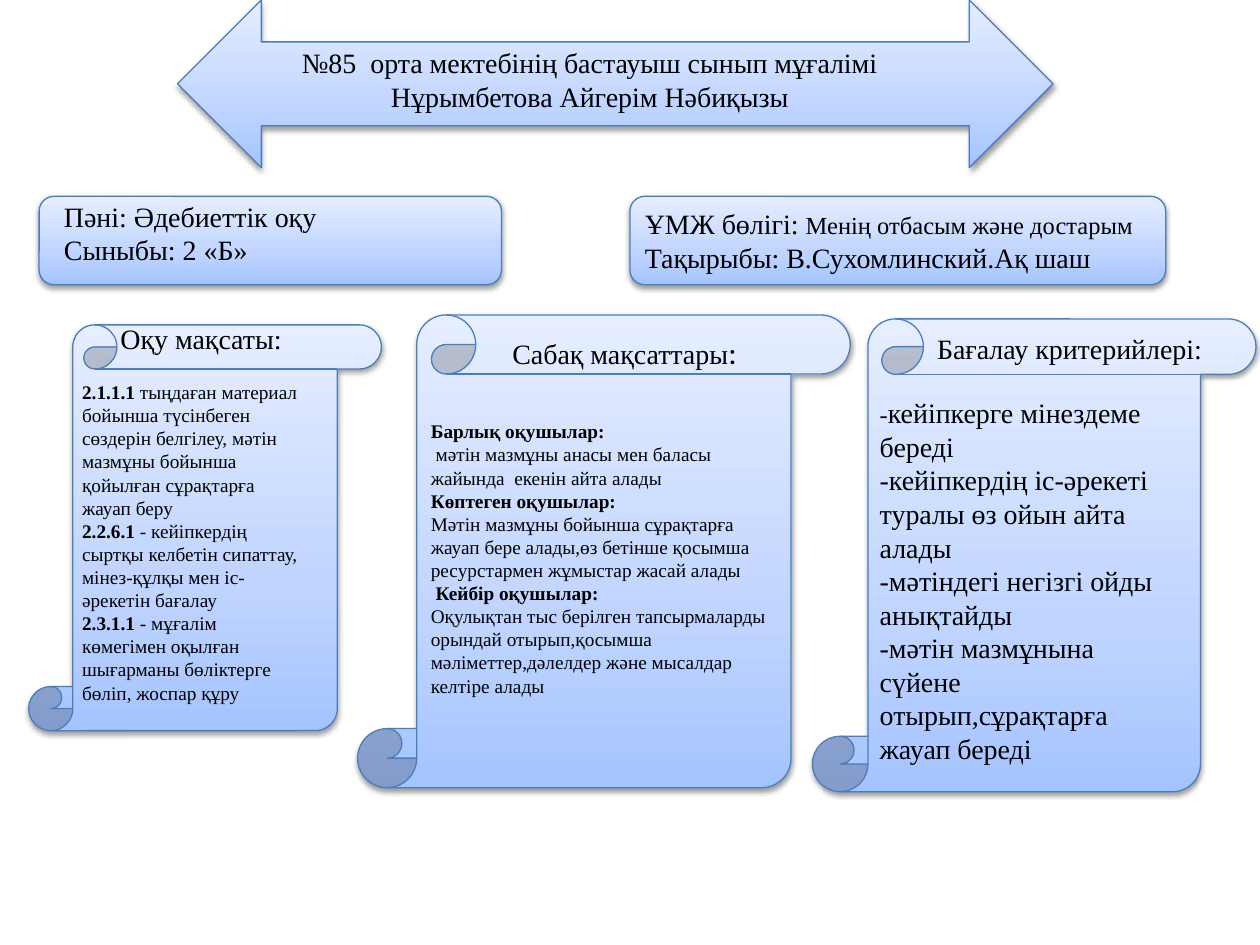
from copy import deepcopy
from dataclasses import dataclass

from pptx import Presentation, oxml, util as u
from pptx.dml.color import RGBColor
from pptx.enum import shapes, text
from pptx.oxml import ns

COLORS = {
    "text": "000000",
    "outline": "4B7EBC",
    "deep": "A4C4FF",
    "middle": "BFD4FF",
    "pale": "E6EEFF",
    "shadow": "000000",
}
SERIF = "Times New Roman"
SHADOW = (
    f'<a:outerShdw {ns.nsdecls("a")} blurRad="40000" dist="20000" dir="5400000" rotWithShape="0">'
    f'<a:srgbClr val="{COLORS["shadow"]}"><a:alpha val="38000"/></a:srgbClr></a:outerShdw>'
)


@dataclass(frozen=True)
class Area:
    left: float
    top: float
    width: float
    height: float

    def lengths(self) -> tuple:
        return tuple(u.Cm(n) for n in (self.left, self.top, self.width, self.height))


@dataclass(frozen=True)
class Span:
    text: str
    size: int = 16
    bold: bool = False
    font: str = SERIF


@dataclass(frozen=True)
class Backdrop:
    kind: shapes.MSO_SHAPE
    area: Area


@dataclass(frozen=True)
class Passage:
    area: Area
    lines: list[list[Span]]
    placeholder: int | None = None
    align: text.PP_ALIGN = text.PP_ALIGN.LEFT


def small(content: str, bold: bool = False) -> Span:
    return Span(content, 11, bold)


BACKDROPS = [
    Backdrop(shapes.MSO_SHAPE.LEFT_RIGHT_ARROW, Area(3.58, 0, 17.65, 3.38)),
    Backdrop(shapes.MSO_SHAPE.ROUNDED_RECTANGLE, Area(0.79, 3.96, 9.32, 1.78)),
    Backdrop(shapes.MSO_SHAPE.ROUNDED_RECTANGLE, Area(12.7, 3.96, 10.8, 1.78)),
    Backdrop(shapes.MSO_SHAPE.VERTICAL_SCROLL, Area(0.58, 6.55, 7.11, 8.18)),
    Backdrop(shapes.MSO_SHAPE.VERTICAL_SCROLL, Area(7.21, 6.35, 9.93, 9.53)),
    Backdrop(shapes.MSO_SHAPE.VERTICAL_SCROLL, Area(16.38, 6.43, 8.94, 9.53)),
]

TEACHER = Passage(Area(5.16, 0.79, 13.46, 1.7), [
    [Span("№85  орта мектебінің бастауыш сынып мұғалімі")],
    [Span("Нұрымбетова Айгерім Нәбиқызы")],
], 0, text.PP_ALIGN.CENTER)

SUBJECT = Passage(Area(1.04, 3.89, 8.74, 1.63), [
    [Span("Пәні: Әдебиеттік оқу")],
    [Span("Сыныбы: 2 «Б»")],
])

TOPIC = Passage(Area(12.75, 4.04, 10.54, 1.63), [
    [Span("ҰМЖ бөлігі: "), Span("Менің отбасым және достарым", 14)],
    [Span("Тақырыбы: В.Сухомлинский.Ақ шаш")],
])

HEADINGS = [
    Passage(Area(2.18, 6.35, 4.37, 0.94), [[Span("Оқу мақсаты:")]]),
    Passage(Area(10.08, 6.58, 6.15, 1.02), [
        [Span("Сабақ мақсаттары"), Span(":", 18, font="Calibri")],
    ]),
    Passage(Area(18.64, 6.55, 6.5, 0.94), [[Span("Бағалау критерийлері:")]]),
]

GOALS = Passage(Area(1.4, 7.54, 4.9, 6.83), [
    [small("2.1.1.1 ", True), small("тыңдаған материал бойынша түсінбеген сөздерін белгілеу, мәтін")],
    [small("мазмұны бойынша қойылған сұрақтарға жауап беру")],
    [small("2.2.6.1 ", True), small("- кейіпкердің сыртқы келбетін сипаттау, мінез-құлқы мен іс-әрекетін бағалау")],
    [small("2.3.1.1", True), small(" - мұғалім көмегімен оқылған шығарманы бөліктерге бөліп, жоспар құру")],
], 1)

OBJECTIVES = Passage(Area(8.43, 8.33, 7.49, 5.8), [
    [small("Барлық оқушылар:", True)],
    [small(" мәтін мазмұны анасы мен баласы жайында  екенін айта алады")],
    [small("Көптеген оқушылар:", True)],
    [small("Мәтін мазмұны бойынша сұрақтарға жауап бере алады,өз бетінше қосымша ресурстармен жұмыстар жасай алады")],
    [small(" Кейбір оқушылар:", True)],
    [small("Оқулықтан тыс берілген тапсырмаларды орындай отырып,қосымша мәліметтер,дәлелдер және мысалдар келтіре алады")],
], 2)

CRITERIA = Passage(Area(17.48, 7.85, 6.15, 7.7), [
    [Span("-", 14), Span("кейіпкерге мінездеме береді")],
    [Span("-кейіпкердің іс-әрекеті туралы өз ойын айта алады")],
    [Span("-мәтіндегі негізгі ойды анықтайды")],
    [Span("-мәтін мазмұнына сүйене отырып,сұрақтарға жауап береді")],
], 4)


def draw_backdrop(page, backdrop: Backdrop) -> None:
    shape = page.shapes.add_shape(backdrop.kind, *backdrop.area.lengths())
    shape.fill.gradient()
    shape.fill.gradient_angle = 90
    stops = shape.element.spPr.find(".//" + ns.qn("a:gsLst"))
    stops.insert(1, deepcopy(stops[0]))
    levels = (("deep", 0), ("middle", 0.35), ("pale", 1))
    for stop, (name, position) in zip(shape.fill.gradient_stops, levels):
        stop.color.rgb = RGBColor.from_string(COLORS[name])
        stop.position = position
    shape.line.color.rgb = RGBColor.from_string(COLORS["outline"])
    shape.line.width = u.Pt(0.75)
    shape.shadow.inherit = False
    shape.element.spPr.find(ns.qn("a:effectLst")).append(oxml.parse_xml(SHADOW))


def style_font(font, span: Span) -> None:
    font.name = span.font
    font.size = u.Pt(span.size)
    font.bold = span.bold
    font.color.rgb = RGBColor.from_string(COLORS["text"])


def write_line(para, spans: list[Span], align: text.PP_ALIGN) -> None:
    para.alignment = align
    para.space_before = u.Pt(0)
    properties = para._p.get_or_add_pPr()
    properties.set("marL", "0")
    properties.set("indent", "0")
    properties.append(oxml.parse_xml(f'<a:buNone {ns.nsdecls("a")}/>'))
    if len(spans) == 1:
        style_font(para.font, spans[0])
    for span in spans:
        run = para.add_run()
        run.text = span.text
        if len(spans) > 1:
            style_font(run.font, span)


def draw_passage(page, passage: Passage) -> None:
    if passage.placeholder is None:
        box = page.shapes.add_textbox(*passage.area.lengths())
    else:
        box = next(p for p in page.placeholders if p.placeholder_format.idx == passage.placeholder)
        box.left, box.top, box.width, box.height = passage.area.lengths()
        box.element.getparent().append(box.element)
    frame = box.text_frame
    frame.word_wrap = True
    frame.auto_size = text.MSO_AUTO_SIZE.NONE
    frame.vertical_anchor = text.MSO_ANCHOR.TOP
    for index, spans in enumerate(passage.lines):
        para = frame.add_paragraph() if index else frame.paragraphs[0]
        write_line(para, spans, passage.align)


def main() -> None:
    deck = Presentation()
    deck.slide_width, deck.slide_height = u.Cm(25.4), u.Cm(19.05)
    page = deck.slides.add_slide(deck.slide_layouts.get_by_name("Comparison"))
    for backdrop in BACKDROPS:
        draw_backdrop(page, backdrop)
    for passage in (TEACHER, SUBJECT, TOPIC, *HEADINGS, GOALS, OBJECTIVES, CRITERIA):
        draw_passage(page, passage)
    for box in list(page.placeholders):
        if not box.text_frame.text:
            box.element.getparent().remove(box.element)
    deck.save("out.pptx")


if __name__ == "__main__":
    main()
